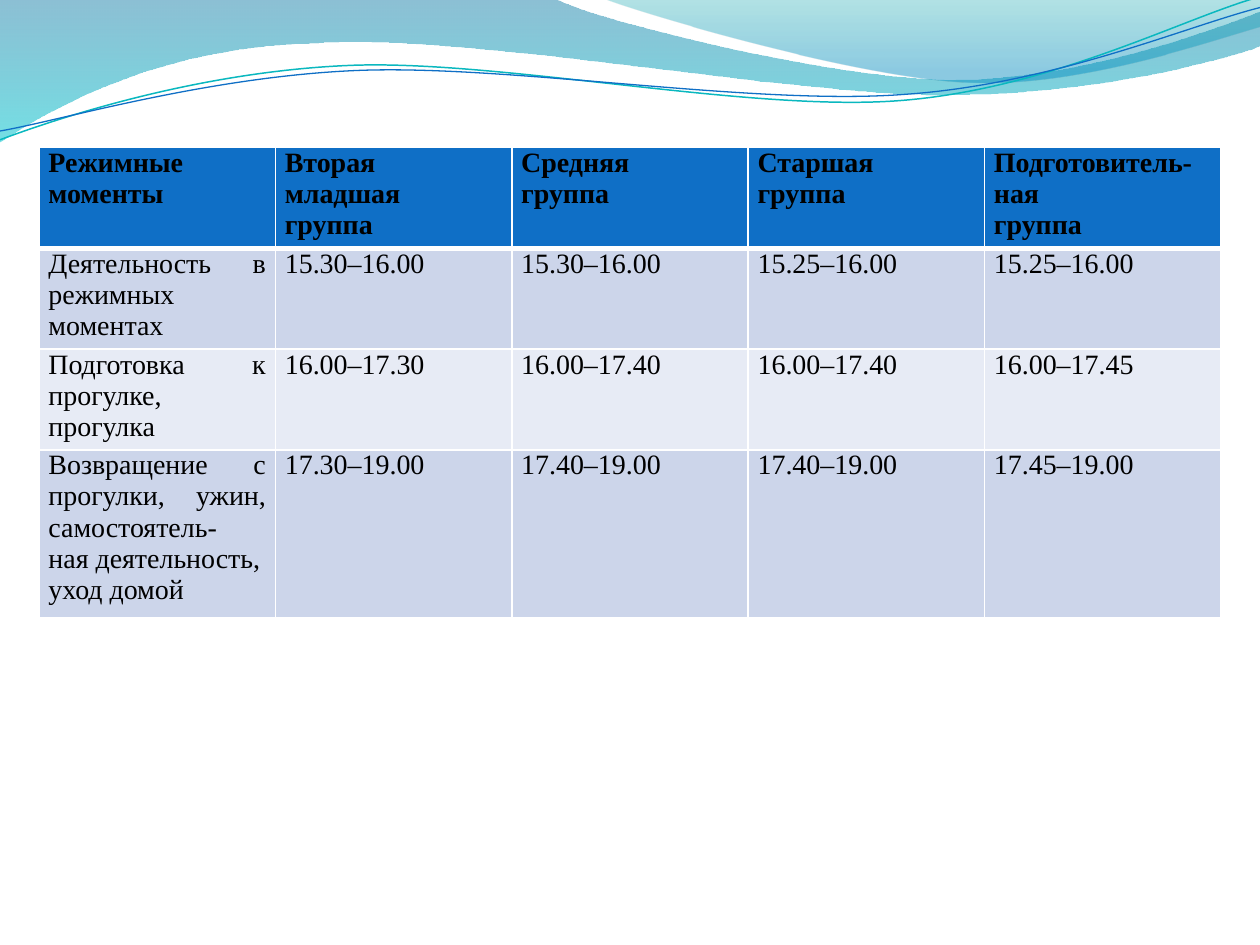
from lxml.etree import SubElement
from pptx import Presentation
from pptx.dml.color import RGBColor
from pptx.enum.text import PP_ALIGN
from pptx.oxml.ns import qn
from pptx.util import Inches, Pt

WIDTH, HEIGHT = 10, 7.5
BLACK = RGBColor(0x00, 0x00, 0x00)
WHITE = RGBColor(0xFF, 0xFF, 0xFF)
BLUE = RGBColor(0x0F, 0x6F, 0xC6)
TEAL = RGBColor(0x0A, 0xB8, 0xBF)
DEEP_BLUE = RGBColor(0x00, 0x74, 0xA1)
CYAN = RGBColor(0x00, 0xC6, 0xCF)
SEA_GREEN = RGBColor(0x00, 0xA1, 0xA9)
SKY_BLUE = RGBColor(0x00, 0x8B, 0xBF)
BAND_DARK = RGBColor(0xCC, 0xD5, 0xEA)
BAND_LIGHT = RGBColor(0xE7, 0xEB, 0xF5)

TABLE_LEFT, TABLE_TOP = 0.31, 1.17
ROW_HEIGHTS = [0.8, 0.8, 0.8, 1.33]
CELL_FORMAT = {"margin_left": Pt(5.4), "margin_right": Pt(5.4),
               "margin_top": 0, "margin_bottom": 0}
FONT_FORMAT = {"name": "Times New Roman", "size": Pt(16)}

ROWS = [
    ["Режимные\nмоменты", "Вторая\nмладшая\nгруппа", "Средняя\nгруппа",
     "Старшая\nгруппа", "Подготовитель-ная\nгруппа"],
    ["Деятельность в режимных моментах",
     "15.30–16.00", "15.30–16.00", "15.25–16.00", "15.25–16.00"],
    ["Подготовка к прогулке, прогулка",
     "16.00–17.30", "16.00–17.40", "16.00–17.40", "16.00–17.45"],
    ["Возвращение с прогулки, ужин, самостоятель-\nная деятельность,\nуход домой",
     "17.30–19.00", "17.40–19.00", "17.40–19.00", "17.45–19.00"],
]

# Each path is a start point followed by line ends (2 numbers) or Bézier curves (6).
BROAD_WAVE = [
    (0, 0), (4.4, -0.01), (4.76, 0.17, 6.64, 0.63, 7.58, 0.63),
    (8.53, 0.63, 9.58, 0.26, 10, 0.09), (10.01, 0.36),
    (9.83, 0.44, 8.7, 0.76, 7.46, 0.75), (6.22, 0.75, 3.82, 0.28, 2.57, 0.34),
    (1.29, 0.36, 0.46, 0.83, -0.01, 1.13), (0, 0),
]
RIGHT_WAVE = [
    (4.79, -0.01), (5.09, 0.11, 6.82, 0.62, 7.69, 0.65),
    (8.56, 0.69, 9.61, 0.32, 10, 0.21), (10, 0), (4.79, -0.01),
]
TEAL_CURVE = [
    (0, 1.11), (0.48, 0.93, 1.58, 0.57, 2.77, 0.52),
    (3.95, 0.47, 5.93, 0.89, 7.13, 0.8), (8.33, 0.71, 9.38, 0.15, 9.98, -0.02),
]
BLUE_CURVE = [
    (0, 1.04), (0.47, 0.96, 1.64, 0.61, 2.83, 0.56),
    (4.03, 0.51, 5.97, 0.84, 7.17, 0.75), (8.36, 0.67, 9.41, 0.21, 10, 0.06),
]


def add_path(s, path, close):
    """Add a freeform, turning each three points of a curve into one Bézier segment."""
    start, *points = [(Inches(x), Inches(y)) for segment in path
                      for x, y in zip(segment[::2], segment[1::2])]
    builder = s.shapes.build_freeform(*start)
    builder.add_line_segments(points, close=close)
    sp = builder.convert_to_shape()
    sp.shadow.inherit = False
    lines = iter(list(sp._element.iter(qn("a:lnTo"))))
    for segment in path[1:]:
        first = next(lines)
        if len(segment) == 6:
            first.tag = qn("a:cubicBezTo")
            for _ in range(2):
                line = next(lines)
                first.append(line[0])
                line.getparent().remove(line)
    return sp


def add_wave(s, path, stops):
    """Add a closed shape with a downward gradient of (position, colour, opacity %)."""
    sp = add_path(s, path, close=True)
    sp.line.fill.background()
    sp.fill.gradient()
    sp.fill.gradient_angle = 270
    for stop, (position, color, _) in zip(sp.fill.gradient_stops, stops):
        stop.position = position
        stop.color.rgb = color
    for clr, (_, _, opacity) in zip(sp._element.spPr.iter(qn("a:srgbClr")), stops):
        SubElement(clr, qn("a:alpha"), val=str(opacity * 1000))


def add_curve(s, path, color, width):
    sp = add_path(s, path, close=False)
    sp.fill.background()
    sp.line.color.rgb = color
    sp.line.width = Pt(width)


def set_borders(cell, widths):
    tcPr = cell._tc.get_or_add_tcPr()
    for side, width in widths.items():
        ln = SubElement(tcPr, qn(f"a:ln{side}"), w=str(Pt(width)))
        SubElement(SubElement(ln, qn("a:solidFill")), qn("a:srgbClr"), val=str(WHITE))


def fill_cell(cell, text, row):
    header = row == 0
    set_borders(cell, {"L": 1, "R": 1, "T": 3 if row == 1 else 1, "B": 3 if header else 1})
    cell.fill.solid()
    cell.fill.fore_color.rgb = BLUE if header else BAND_DARK if row % 2 else BAND_LIGHT
    for name, value in CELL_FORMAT.items():
        setattr(cell, name, value)
    cell.text = text
    for p in cell.text_frame.paragraphs:
        p.alignment = PP_ALIGN.JUSTIFY
        for r in p.runs:
            for name, value in {**FONT_FORMAT, "bold": header}.items():
                setattr(r.font, name, value)
            r.font.color.rgb = BLACK


def add_schedule(s):
    width = WIDTH - 2 * TABLE_LEFT
    columns = len(ROWS[0])
    table = s.shapes.add_table(
        len(ROWS), columns, Inches(TABLE_LEFT), Inches(TABLE_TOP),
        Inches(width), Inches(sum(ROW_HEIGHTS))).table
    for column in table.columns:
        column.width = Inches(width / columns)
    for i, (texts, height) in enumerate(zip(ROWS, ROW_HEIGHTS)):
        table.rows[i].height = Inches(height)
        for j, text in enumerate(texts):
            fill_cell(table.cell(i, j), text, i)


def main():
    prs = Presentation()
    prs.slide_width, prs.slide_height = Inches(WIDTH), Inches(HEIGHT)
    s = prs.slides.add_slide(prs.slide_layouts[6])
    add_wave(s, BROAD_WAVE, [(0, DEEP_BLUE, 45), (1, CYAN, 55)])
    add_wave(s, RIGHT_WAVE, [(0, SEA_GREEN, 30), (0.8, SKY_BLUE, 45)])
    add_curve(s, TEAL_CURVE, TEAL, 0.85)
    add_curve(s, BLUE_CURVE, BLUE, 0.75)
    add_schedule(s)
    prs.save("out.pptx")


if __name__ == "__main__":
    main()
